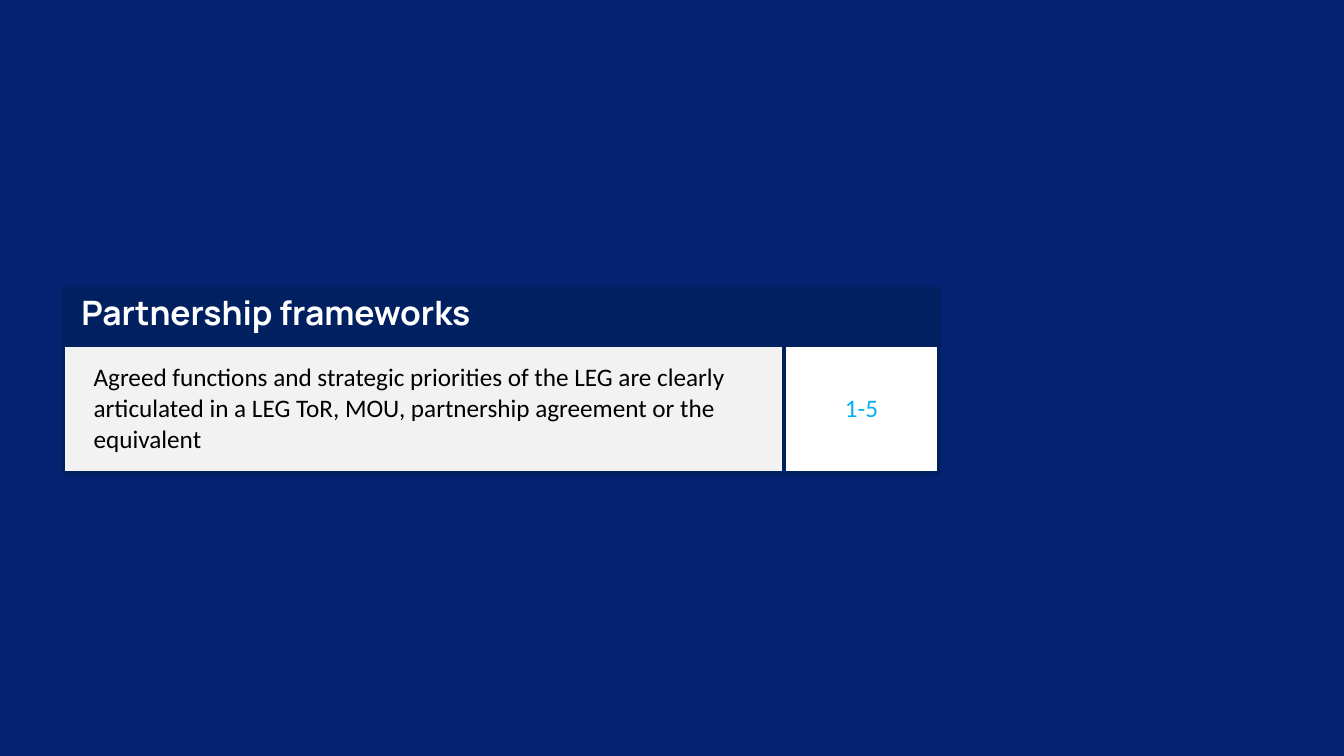
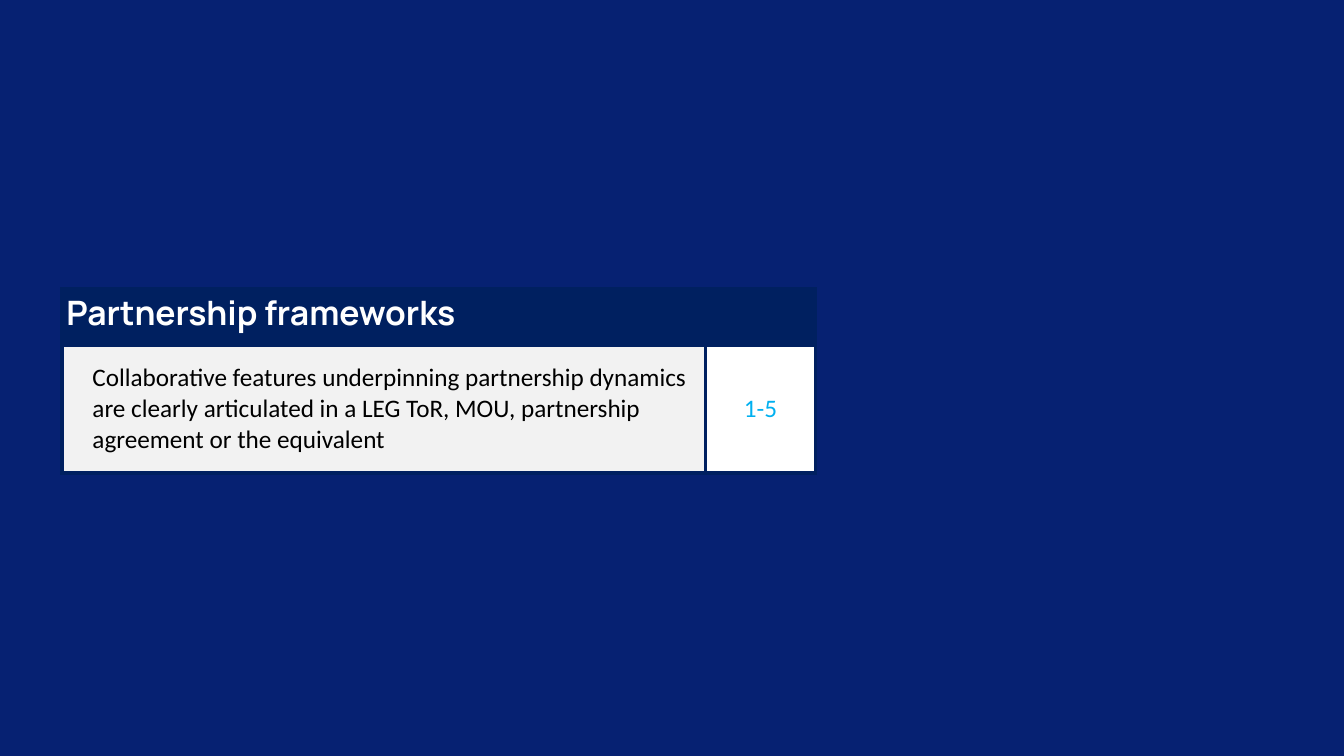
from dataclasses import dataclass

from lxml import etree
from pptx import Presentation
from pptx.dml.color import RGBColor
from pptx.enum.text import MSO_ANCHOR, PP_ALIGN
from pptx.oxml.ns import qn
from pptx.presentation import Presentation as Deck
from pptx.table import _Cell as Cell
from pptx.util import Cm, Pt

LEFT, CENTER = PP_ALIGN.LEFT, PP_ALIGN.CENTER
MIDDLE, BOTTOM = MSO_ANCHOR.MIDDLE, MSO_ANCHOR.BOTTOM

# Shared colours
BACKGROUND = RGBColor(0x06, 0x21, 0x72)
NAVY = RGBColor(0x00, 0x20, 0x60)
PALE_GREY = RGBColor(0xF2, 0xF2, 0xF2)
SKY_BLUE = RGBColor(0x00, 0xB0, 0xF0)
WHITE = RGBColor(0xFF, 0xFF, 0xFF)
BLACK = RGBColor(0x00, 0x00, 0x00)

# Shared measures
TABLE_TOP = Cm(7.29)
HEADER_HEIGHT = Cm(1.41)
CRITERION_HEIGHT = Cm(3.21)
BORDER_WIDTH = Pt(3)
HEADING = "Partnership frameworks"
SCALE = "1-5"


@dataclass(frozen=True)
class CellStyle:
    font: str
    size: int
    color: RGBColor
    fill: RGBColor
    bold: bool = False
    align: PP_ALIGN = LEFT
    anchor: MSO_ANCHOR = MIDDLE
    bottom: Cm = Cm(0)


@dataclass(frozen=True)
class Criterion:
    text: str
    left: Cm
    text_width: Cm
    scale_width: Cm
    heading_indent: Cm


HEADER_STYLE = CellStyle("Manrope", 24, WHITE, NAVY, bold=True, anchor=BOTTOM, bottom=Cm(0.25))
CRITERION_STYLE = CellStyle("Calibri", 18, BLACK, PALE_GREY)
SCALE_STYLE = CellStyle("Calibri", 18, SKY_BLUE, WHITE, align=CENTER)

CRITERIA = [
    Criterion(
        "Agreed functions and strategic priorities of the LEG are clearly articulated "
        "in a LEG ToR, MOU, partnership agreement or the equivalent",
        Cm(1.6), Cm(18.16), Cm(3.9), Cm(0.45),
    ),
    Criterion(
        "Collaborative features underpinning partnership dynamics are clearly articulated "
        "in a LEG ToR, MOU, partnership agreement or the equivalent",
        Cm(1.57), Cm(16.21), Cm(2.77), Cm(0.1),
    ),
]


def add_borders(cell: Cell) -> None:
    properties = cell._tc.get_or_add_tcPr()
    for side in ("a:lnL", "a:lnR", "a:lnT", "a:lnB"):
        line = etree.SubElement(properties, qn(side), w=str(BORDER_WIDTH))
        fill = etree.SubElement(line, qn("a:solidFill"))
        etree.SubElement(fill, qn("a:srgbClr"), val=str(NAVY))


def fill_cell(cell: Cell, text: str, style: CellStyle, indent: Cm = Cm(0)) -> None:
    cell.fill.solid()
    cell.fill.fore_color.rgb = style.fill
    cell.vertical_anchor = style.anchor
    cell.margin_left, cell.margin_right = indent, Cm(0)
    cell.margin_top, cell.margin_bottom = Cm(0), style.bottom
    paragraph = cell.text_frame.paragraphs[0]
    paragraph.alignment = style.align
    run = paragraph.add_run()
    run.text = text
    run.font.name = style.font
    run.font.size = Pt(style.size)
    run.font.bold = style.bold
    run.font.color.rgb = style.color


def add_criterion_slide(presentation: Deck, criterion: Criterion) -> None:
    slide = presentation.slides.add_slide(presentation.slide_layouts[6])
    slide.background.fill.solid()
    slide.background.fill.fore_color.rgb = BACKGROUND

    # Table grid
    widths = (criterion.text_width, criterion.scale_width)
    heights = (HEADER_HEIGHT, CRITERION_HEIGHT)
    table = slide.shapes.add_table(
        2, 2, criterion.left, TABLE_TOP, sum(widths), sum(heights)
    ).table
    table.first_row = table.horz_banding = False
    for column, width in zip(table.columns, widths):
        column.width = width
    for row, height in zip(table.rows, heights):
        row.height = height
    for cell in table.iter_cells():
        add_borders(cell)

    # Heading across both columns, then the criterion and its scale
    table.cell(0, 0).merge(table.cell(0, 1))
    fill_cell(table.cell(0, 0), HEADING, HEADER_STYLE, criterion.heading_indent)
    fill_cell(table.cell(1, 0), criterion.text, CRITERION_STYLE, Cm(0.76))
    fill_cell(table.cell(1, 1), SCALE, SCALE_STYLE)


def main() -> None:
    presentation = Presentation()
    presentation.slide_width, presentation.slide_height = Cm(33.87), Cm(19.05)
    for criterion in CRITERIA:
        add_criterion_slide(presentation, criterion)
    presentation.save("out.pptx")


if __name__ == "__main__":
    main()
